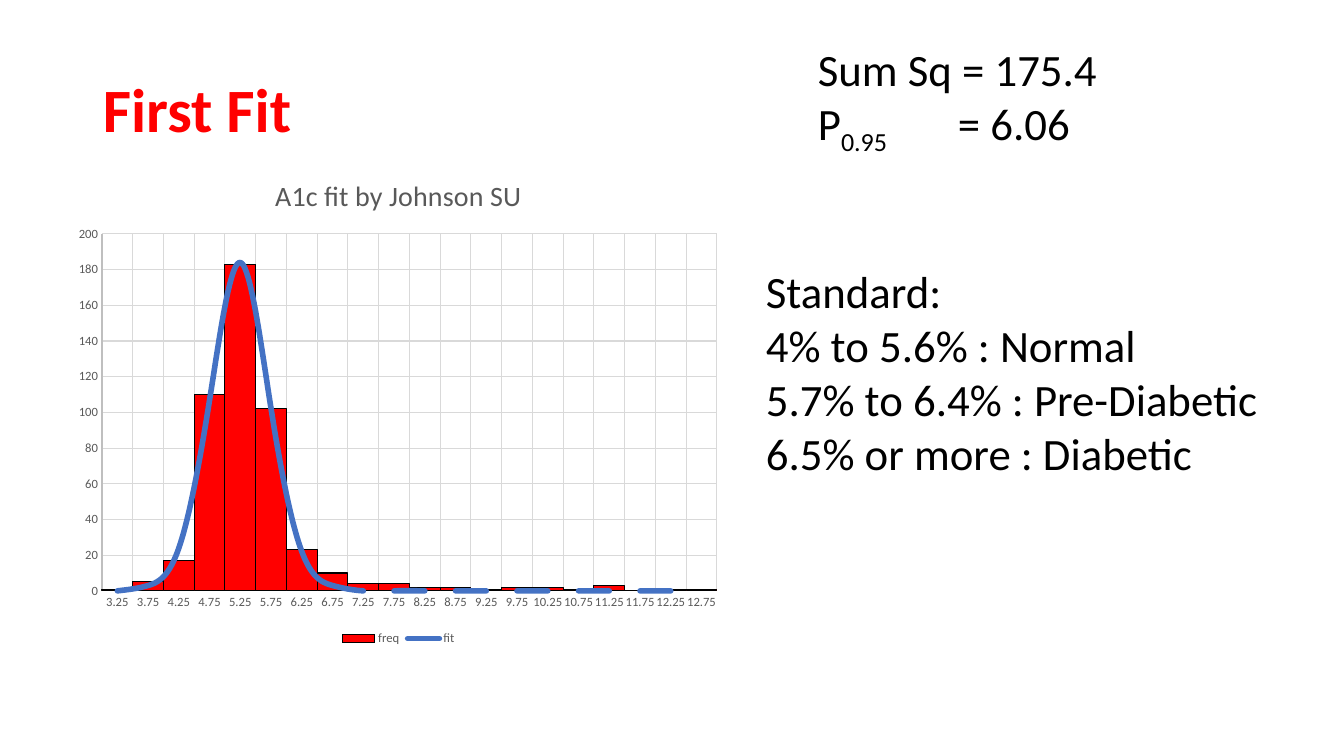
from lxml import etree
from pptx import Presentation
from pptx.chart.data import CategoryChartData
from pptx.dml.color import RGBColor
from pptx.enum.chart import XL_CHART_TYPE as ChartType, XL_LEGEND_POSITION as LegendPosition
from pptx.enum.chart import XL_MARKER_STYLE as MarkerStyle, XL_TICK_MARK as TickMark
from pptx.enum.text import MSO_ANCHOR as Anchor
from pptx.oxml import parse_xml
from pptx.oxml.ns import nsdecls, qn
from pptx.util import Pt

FONT = "Calibri"
SLIDE = (1344, 756)
EMU_PER_PX = 12192000 / 1344
TITLE = ("First Fit", (93, 40, 1159, 146))
RESULTS = (
    [[("Sum Sq = 175.4", 0)], [("P", 0), ("0.95", -25), ("\t= 6.06", 0)]],
    (808, 37, 338, 119),
)
RESULT_TAB = 140
STANDARD = (
    ["Standard:", "4% to 5.6% : Normal", "5.7% to 6.4% : Pre-Diabetic", "6.5% or more : Diabetic"],
    (756, 259, 557, 228),
)
CHART_TITLE = "A1c fit by Johnson SU"
CHART_AREA = (67, 156, 663, 494)
PLOT_AREA = (102, 234, 615, 357)
FIRST_BIN, BIN_WIDTH = 3.25, 0.5
FREQ = [1, 5, 17, 110, 183, 102, 23, 10, 4, 4, 2, 2, 1, 2, 2, 1, 3, 0, 1, 1]
FIT = [0, 3, 24, 107, 184, 102, 22, 3] + [0] * 12
RED, BLUE, BLACK, GRAY, GRID, AXIS = "FF0000", "4472C4", "000000", "595959", "D9D9D9", "BFBFBF"


def emu(px):
    return round(px * EMU_PER_PX)


def color(hex_text):
    return RGBColor.from_string(hex_text)


def style_font(font, size, tint, bold=False):
    font.name, font.size, font.bold = FONT, Pt(size), bold
    font.color.rgb = color(tint)


def style_line(line, tint, width):
    line.color.rgb = color(tint)
    line.width = Pt(width)


def add_text(slide, area, paragraphs, size=32, tint=BLACK, bold=False, anchor=Anchor.TOP, spacing=1.0, tab=None):
    box = slide.shapes.add_textbox(*map(emu, area))
    frame = box.text_frame
    frame.word_wrap = True
    frame.vertical_anchor = anchor
    for index, spans in enumerate(paragraphs):
        para = frame.paragraphs[0] if index == 0 else frame.add_paragraph()
        para.line_spacing = spacing
        if tab:
            stops = etree.SubElement(para._p.get_or_add_pPr(), qn("a:tabLst"))
            etree.SubElement(stops, qn("a:tab"), pos=str(emu(tab)), algn="l")
        for text, baseline in spans:
            span = para.add_run()
            span.text = text
            style_font(span.font, size, tint, bold)
            if baseline:
                span.font._element.set("baseline", str(baseline * 1000))


def style_axis(axis):
    axis.major_tick_mark = axis.minor_tick_mark = TickMark.NONE
    style_font(axis.tick_labels.font, 9, GRAY)
    style_line(axis.format.line, AXIS, 0.75)
    axis.has_major_gridlines = True
    style_line(axis.major_gridlines.format.line, GRID, 0.75)


def move_to_line_plot(chart, series):
    bars = chart._chartSpace.find(".//" + qn("c:barChart"))
    lines = parse_xml(
        f'<c:lineChart {nsdecls("c")}><c:grouping val="standard"/><c:varyColors val="0"/></c:lineChart>'
    )
    node = series._element
    for flag in node.findall(qn("c:invertIfNegative")):
        node.remove(flag)
    lines.append(node)
    etree.SubElement(lines, qn("c:marker"), val="1")
    for axis_id in bars.findall(qn("c:axId")):
        etree.SubElement(lines, qn("c:axId"), val=axis_id.get("val"))
    bars.addnext(lines)


def place_plot(chart):
    left, top, width, height = CHART_AREA
    x, y, w, h = PLOT_AREA
    shares = {"x": (x - left) / width, "y": (y - top) / height, "w": w / width, "h": h / height}
    modes = {"layoutTarget": "inner", "xMode": "edge", "yMode": "edge"}
    values = modes | {name: f"{share:.4f}" for name, share in shares.items()}
    plot_area = chart._chartSpace.find(".//" + qn("c:plotArea"))
    for old in plot_area.findall(qn("c:layout")):
        plot_area.remove(old)
    layout = parse_xml(f'<c:layout {nsdecls("c")}><c:manualLayout/></c:layout>')
    for name, value in values.items():
        etree.SubElement(layout[0], qn("c:" + name), val=value)
    plot_area.insert(0, layout)


def add_fit_chart(slide):
    data = CategoryChartData()
    data.categories = [f"{FIRST_BIN + BIN_WIDTH * index:.2f}" for index in range(len(FREQ))]
    data.add_series("freq", FREQ)
    data.add_series("fit", FIT)
    chart = slide.shapes.add_chart(ChartType.COLUMN_CLUSTERED, *map(emu, CHART_AREA), data).chart
    style_font(chart.font, 10, BLACK)

    chart.has_title = True
    span = chart.chart_title.text_frame.paragraphs[0].add_run()
    span.text = CHART_TITLE
    style_font(span.font, 20, GRAY)
    chart.has_legend = True
    chart.legend.position = LegendPosition.BOTTOM
    chart.legend.include_in_layout = False
    style_font(chart.legend.font, 9, GRAY)

    style_axis(chart.category_axis)
    style_axis(chart.value_axis)
    chart.value_axis.minimum_scale = 0
    chart.value_axis.maximum_scale = 200
    chart.value_axis.major_unit = 20

    columns = chart.plots[0]
    columns.gap_width = 0
    columns.vary_by_categories = False
    freq, fit = columns.series
    freq.format.fill.solid()
    freq.format.fill.fore_color.rgb = color(RED)
    style_line(freq.format.line, BLACK, 0.75)
    move_to_line_plot(chart, fit)
    curve = chart.plots[1].series[0]
    curve.smooth = True
    curve.marker.style = MarkerStyle.NONE
    style_line(curve.format.line, BLUE, 4)
    curve.format.line._get_or_add_ln().set("cap", "rnd")
    place_plot(chart)


def main():
    deck = Presentation()
    deck.slide_width, deck.slide_height = map(emu, SLIDE)
    page = deck.slides.add_slide(deck.slide_layouts[6])
    title, title_area = TITLE
    add_text(page, title_area, [[(title, 0)]], size=44, tint=RED, bold=True, anchor=Anchor.MIDDLE, spacing=0.9)
    results, results_area = RESULTS
    add_text(page, results_area, results, tab=RESULT_TAB)
    standard, standard_area = STANDARD
    add_text(page, standard_area, [[(text, 0)] for text in standard])
    add_fit_chart(page)
    deck.save("out.pptx")


if __name__ == "__main__":
    main()
